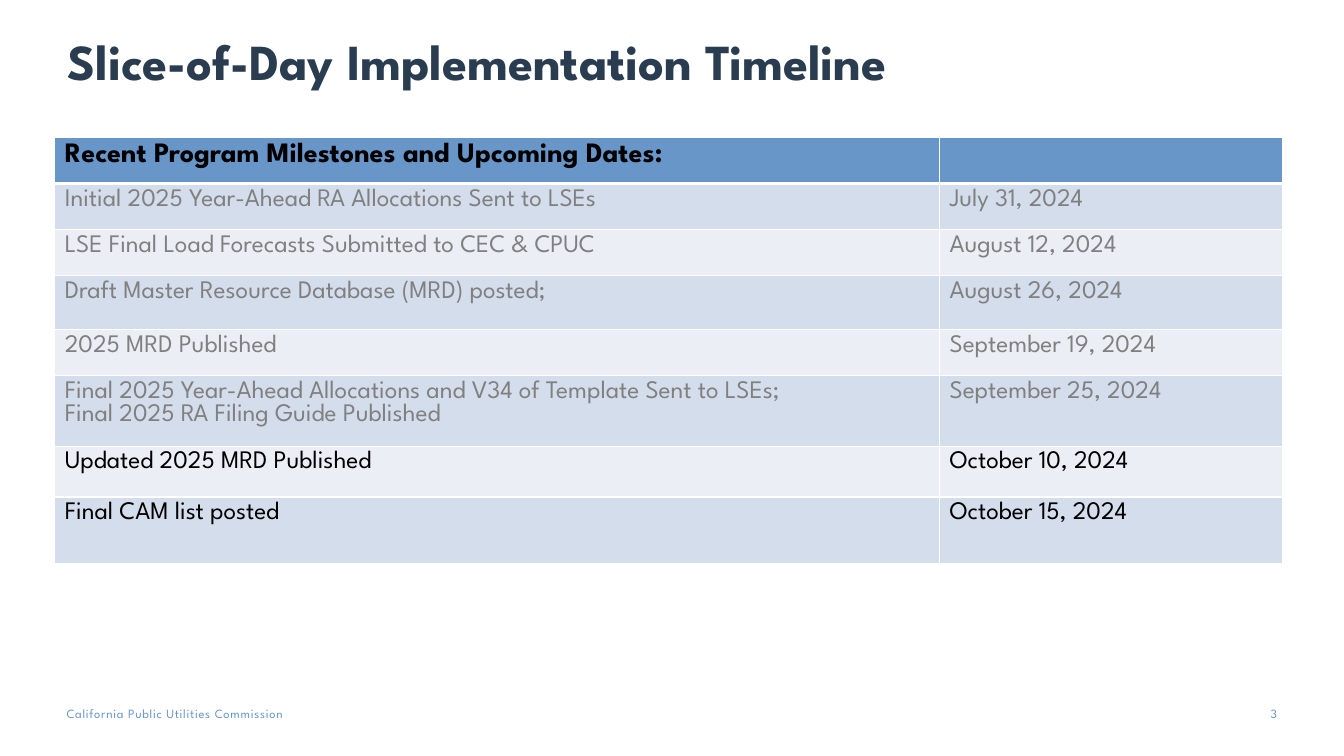
from lxml.etree import SubElement
from pptx import Presentation
from pptx.dml.color import RGBColor
from pptx.enum.text import MSO_ANCHOR, PP_ALIGN
from pptx.oxml.ns import qn
from pptx.util import Pt

FONT = "League Spartan"
NAVY, BLUE, GRAY, BLACK, WHITE = "2A3C50", "6996C9", "808080", "000000", "FFFFFF"
BANDS = ["D4DDEB", "EBEFF5"]

TITLE = "Slice-of-Day Implementation Timeline"
AGENCY = "California Public Utilities Commission"
PAGE = "3"
HEADING = "Recent Program Milestones and Upcoming Dates:"
MILESTONES = [
    (["Initial 2025 Year-Ahead RA Allocations Sent to LSEs"], "July 31, 2024", GRAY, 32.9),
    (["LSE Final Load Forecasts Submitted to CEC & CPUC"], "August 12, 2024", GRAY, 32.9),
    (["Draft Master Resource Database (MRD) posted;"], "August 26, 2024", GRAY, 38.5),
    (["2025 MRD Published"], "September 19, 2024", GRAY, 32.9),
    (["Final 2025 Year-Ahead Allocations and V34 of Template Sent to LSEs;",
      "Final 2025 RA Filing Guide Published"], "September 25, 2024", GRAY, 49.3),
    (["Updated 2025 MRD Published"], "October 10, 2024", BLACK, 36.4),
    (["Final CAM list posted"], "October 15, 2024", BLACK, 47.3),
]
HEADING_HEIGHT = 32.9
COLUMN_WIDTHS = [632, 245]


def color(value):
    return RGBColor.from_string(value)


def write(tf, lines, size, ink, bold=False, align=PP_ALIGN.LEFT):
    for i, line in enumerate(lines):
        p = tf.paragraphs[0] if i == 0 else tf.add_paragraph()
        p.alignment = align
        r = p.add_run()
        r.text = line
        r.font.name = FONT
        r.font.size = Pt(size)
        r.font.bold = bold
        r.font.color.rgb = color(ink)


def add_text(s, box, margins, text, size, ink, anchor=MSO_ANCHOR.TOP, **style):
    tf = s.shapes.add_textbox(*map(Pt, box)).text_frame
    tf.word_wrap = True
    tf.vertical_anchor = anchor
    tf.margin_left, tf.margin_top, tf.margin_right, tf.margin_bottom = map(Pt, margins)
    write(tf, [text], size, ink, **style)
    return tf


def style_cell(cell, fill, top, bottom):
    tcPr = cell._tc.get_or_add_tcPr()
    for side, width in (("L", 1), ("R", 1), ("T", top), ("B", bottom)):
        ln = SubElement(tcPr, qn("a:ln" + side), w=str(Pt(width)))
        SubElement(SubElement(ln, qn("a:solidFill")), qn("a:srgbClr"), val=WHITE)
    cell.fill.solid()
    cell.fill.fore_color.rgb = color(fill)


prs = Presentation()
prs.slide_width, prs.slide_height = Pt(960), Pt(540)
s = prs.slides.add_slide(prs.slide_layouts[6])

footer = add_text(s, (47.5, 504, 231, 11), (0, 0, 0, 0), AGENCY, 9, BLUE)
footer.paragraphs[0].runs[0].font._element.set("spc", "50")
add_text(s, (48.2, 28.8, 834, 39.6), (0, 3.6, 7.2, 3.6), TITLE, 36, NAVY,
         MSO_ANCHOR.BOTTOM, bold=True)
add_text(s, (882, 504, 30.2, 14.4), (0, 0, 0, 0), PAGE, 9, BLUE, align=PP_ALIGN.RIGHT)

heights = [HEADING_HEIGHT] + [m[3] for m in MILESTONES]
table = s.shapes.add_table(len(heights), 2, Pt(39.1), Pt(98.2),
                           Pt(sum(COLUMN_WIDTHS)), Pt(sum(heights))).table
for column, width in zip(table.columns, COLUMN_WIDTHS):
    column.width = Pt(width)
for row, height in zip(table.rows, heights):
    row.height = Pt(height)

for cell in table.rows[0].cells:
    style_cell(cell, BLUE, 1, 3)
write(table.cell(0, 0).text_frame, [HEADING], 20, BLACK, bold=True)

for i, (lines, date, ink, height) in enumerate(MILESTONES):
    for cell, content in zip(table.rows[i + 1].cells, (lines, [date])):
        style_cell(cell, BANDS[i % 2], 3 if i == 0 else 1, 1)
        write(cell.text_frame, content, 18, ink)

prs.save("out.pptx")
